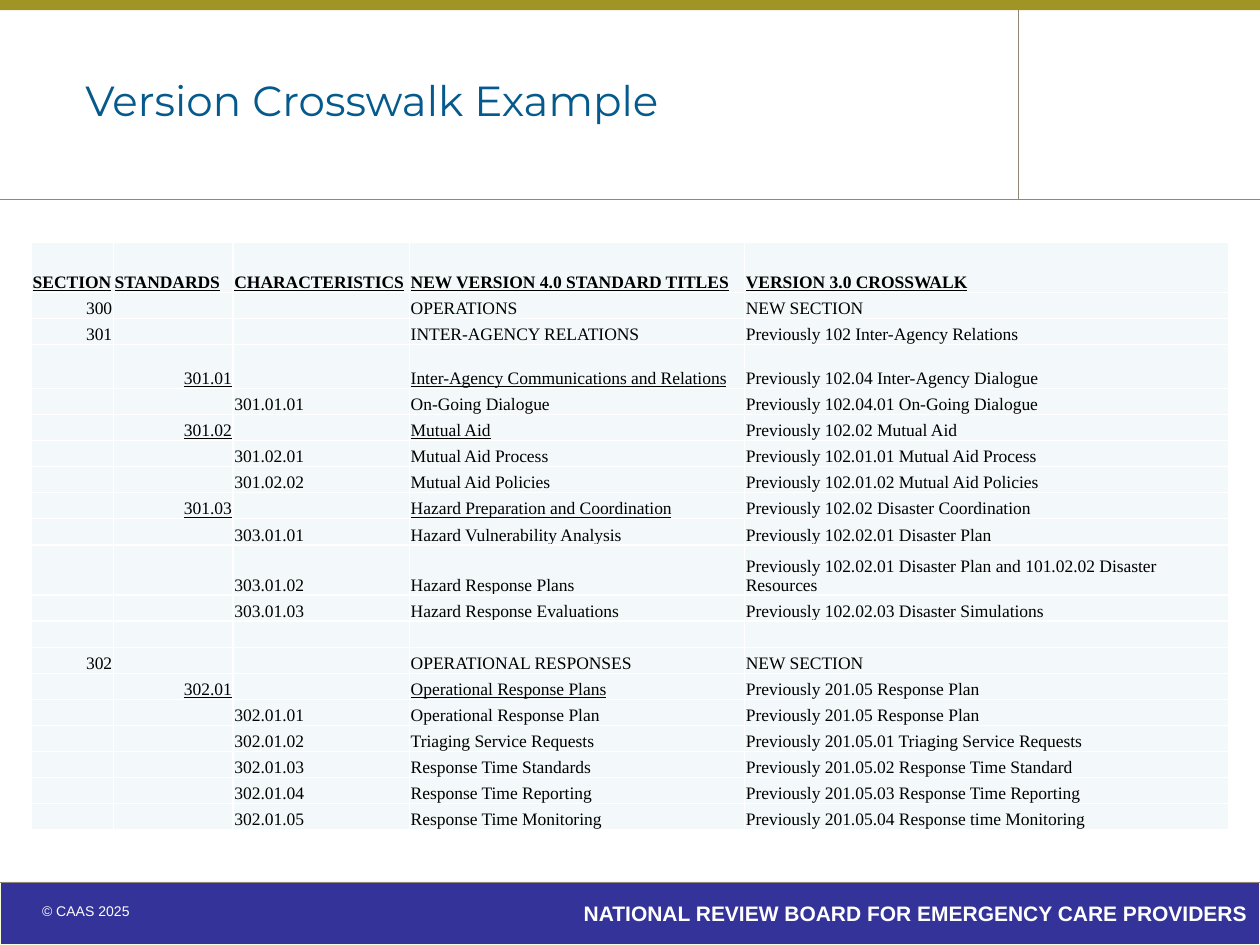
from lxml.etree import SubElement
from pptx import Presentation
from pptx.dml.color import RGBColor
from pptx.enum.shapes import MSO_CONNECTOR, MSO_SHAPE
from pptx.enum.text import MSO_ANCHOR, PP_ALIGN
from pptx.oxml.ns import qn
from pptx.util import Inches, Pt

COLORS = {
    "white": "FFFFFF", "black": "000000", "footer": "333399",
    "footer_line": "F6FFD8", "rule": "908774", "band": "A09424",
    "title": "055A8D", "cell": "F3F9FA",
}

HEADINGS = ["SECTION", "STANDARDS", "CHARACTERISTICS",
            "NEW VERSION 4.0 STANDARD TITLES", "VERSION 3.0 CROSSWALK"]

# Code, new title, former standard; the dots in a code give its column
STANDARDS = [
    ("300", "OPERATIONS", "NEW SECTION"),
    ("301", "INTER-AGENCY RELATIONS", "Previously 102 Inter-Agency Relations"),
    ("301.01", "Inter-Agency Communications and Relations",
     "Previously 102.04 Inter-Agency Dialogue"),
    ("301.01.01", "On-Going Dialogue", "Previously 102.04.01 On-Going Dialogue"),
    ("301.02", "Mutual Aid", "Previously 102.02 Mutual Aid"),
    ("301.02.01", "Mutual Aid Process", "Previously 102.01.01 Mutual Aid Process"),
    ("301.02.02", "Mutual Aid Policies", "Previously 102.01.02 Mutual Aid Policies"),
    ("301.03", "Hazard Preparation and Coordination",
     "Previously 102.02 Disaster Coordination"),
    ("303.01.01", "Hazard Vulnerability Analysis", "Previously 102.02.01 Disaster Plan"),
    ("303.01.02", "Hazard Response Plans",
     "Previously 102.02.01 Disaster Plan and 101.02.02 Disaster Resources"),
    ("303.01.03", "Hazard Response Evaluations",
     "Previously 102.02.03 Disaster Simulations"),
    ("", "", ""),
    ("302", "OPERATIONAL RESPONSES", "NEW SECTION"),
    ("302.01", "Operational Response Plans", "Previously 201.05 Response Plan"),
    ("302.01.01", "Operational Response Plan", "Previously 201.05 Response Plan"),
    ("302.01.02", "Triaging Service Requests",
     "Previously 201.05.01 Triaging Service Requests"),
    ("302.01.03", "Response Time Standards",
     "Previously 201.05.02 Response Time Standard"),
    ("302.01.04", "Response Time Reporting",
     "Previously 201.05.03 Response Time Reporting"),
    ("302.01.05", "Response Time Monitoring",
     "Previously 201.05.04 Response time Monitoring"),
]
COLUMN_WIDTHS = [0.65, 0.95, 1.4, 2.66, 3.84]
TALL_ROWS = {0: 0.4, 3: 0.35, 10: 0.4}


def color(name):
    return RGBColor.from_string(COLORS[name])


def style_text(paragraph, font_name, size, color_name, bold=False, underline=False):
    for run in paragraph.runs:
        font = run.font
        font.name, font.size = font_name, Pt(size)
        font.bold, font.underline = bold, underline
        font.color.rgb = color(color_name)


def add_bar(slide, left, top, width, height, fill, line=None):
    bar = slide.shapes.add_shape(MSO_SHAPE.RECTANGLE, Inches(left), Inches(top),
                                 Inches(width), Inches(height))
    bar.shadow.inherit = False
    bar.fill.solid()
    bar.fill.fore_color.rgb = color(fill)
    if line:
        bar.line.color.rgb = color(line)
        bar.line.width = Pt(0.75)
    else:
        bar.line.fill.background()
    return bar


def add_rule(slide, x1, y1, x2, y2, weight=0.45):
    rule = slide.shapes.add_connector(MSO_CONNECTOR.STRAIGHT, Inches(x1), Inches(y1),
                                      Inches(x2), Inches(y2))
    rule.line.color.rgb = color("rule")
    rule.line.width = Pt(weight)
    SubElement(rule._element.spPr, qn("a:effectLst"))


def add_label(slide, left, top, width, height, text):
    label = slide.shapes.add_textbox(Inches(left), Inches(top),
                                     Inches(width), Inches(height))
    frame = label.text_frame
    frame.word_wrap = True
    frame.vertical_anchor = MSO_ANCHOR.MIDDLE
    frame.text = text
    return frame


def add_footer(slide, left, top, width, height):
    bar = add_bar(slide, left, top, width, height, "footer", "footer_line")
    frame = bar.text_frame
    frame.vertical_anchor = MSO_ANCHOR.MIDDLE
    frame.text = "NATIONAL REVIEW BOARD FOR EMERGENCY CARE PROVIDERS"
    frame.paragraphs[0].alignment = PP_ALIGN.RIGHT
    style_text(frame.paragraphs[0], "Arial", 12, "white", bold=True)
    add_rule(slide, left, top, left + width, top)

    # Copyright line
    notice = add_label(slide, left, top + 0.14, 1.34, 0.2, "© CAAS 2025")
    notice.margin_top = notice.margin_bottom = Inches(0.04)
    notice.margin_right = Inches(0.31)
    notice.paragraphs[0].alignment = PP_ALIGN.RIGHT
    notice.paragraphs[0].line_spacing = 0.9
    style_text(notice.paragraphs[0], "Arial", 8, "white")


def add_header(slide, left, top, width, height):
    divider = left + 8.08
    add_bar(slide, left, top, divider - left, height, "white")
    add_rule(slide, divider, top, divider, top + height)
    add_rule(slide, left, top + height, left + width, top + height, 0.5)
    add_bar(slide, left, top, width, 0.08, "band")
    title = add_label(slide, left + 0.58, top + 0.25, 7.08, 1.08,
                      "Version Crosswalk Example")
    style_text(title.paragraphs[0], "Montserrat", 24, "title")


def add_borders(cell):
    properties = cell._tc.get_or_add_tcPr()
    for index, side in enumerate(("lnL", "lnR", "lnT", "lnB")):
        border = properties.makeelement(qn(f"a:{side}"), {"w": str(Pt(1))})
        fill = SubElement(border, qn("a:solidFill"))
        SubElement(fill, qn("a:srgbClr"), val=COLORS["white"])
        properties.insert(index, border)


def fill_cell(cell, text, alignment, bold, underline):
    cell.fill.solid()
    cell.fill.fore_color.rgb = color("cell")
    cell.vertical_anchor = MSO_ANCHOR.BOTTOM
    cell.margin_left = cell.margin_right = cell.margin_top = Inches(0.01)
    cell.margin_bottom = 0
    add_borders(cell)
    paragraph = cell.text_frame.paragraphs[0]
    paragraph.alignment = alignment
    if text:
        paragraph.text = text
        style_text(paragraph, "Times New Roman", 10, "black", bold, underline)
    else:
        # Small end mark keeps empty cells from stretching their row
        SubElement(paragraph._p, qn("a:endParaRPr"), sz="1000")


def add_crosswalk(slide, left, top, width, height):
    row_count = len(STANDARDS) + 1
    table = slide.shapes.add_table(row_count, len(HEADINGS), Inches(left), Inches(top),
                                   Inches(width), Inches(height)).table
    table.first_row = table.horz_banding = False
    for column, column_width in zip(table.columns, COLUMN_WIDTHS):
        column.width = Inches(column_width)
    plain_height = (height - sum(TALL_ROWS.values())) / (row_count - len(TALL_ROWS))
    for index, row in enumerate(table.rows):
        row.height = Inches(TALL_ROWS.get(index, plain_height))

    for column, heading in enumerate(HEADINGS):
        fill_cell(table.cell(0, column), heading, PP_ALIGN.LEFT, True, True)
    for row, (code, title, former) in enumerate(STANDARDS, start=1):
        level = code.count(".")
        values = ["", "", "", title, former]
        values[level] = code
        for column, value in enumerate(values):
            alignment = PP_ALIGN.RIGHT if column < 2 else PP_ALIGN.LEFT
            underline = level == 1 and column in (1, 3)
            fill_cell(table.cell(row, column), value, alignment, False, underline)


def main():
    presentation = Presentation()
    presentation.slide_width, presentation.slide_height = Inches(10), Inches(7.5)
    slide = presentation.slides.add_slide(presentation.slide_layouts[6])
    add_footer(slide, 0, 7, 10, 0.5)
    add_header(slide, 0, 0, 10, 1.58)
    add_crosswalk(slide, 0.25, 1.92, 9.5, 4.67)
    presentation.save("out.pptx")


if __name__ == "__main__":
    main()
